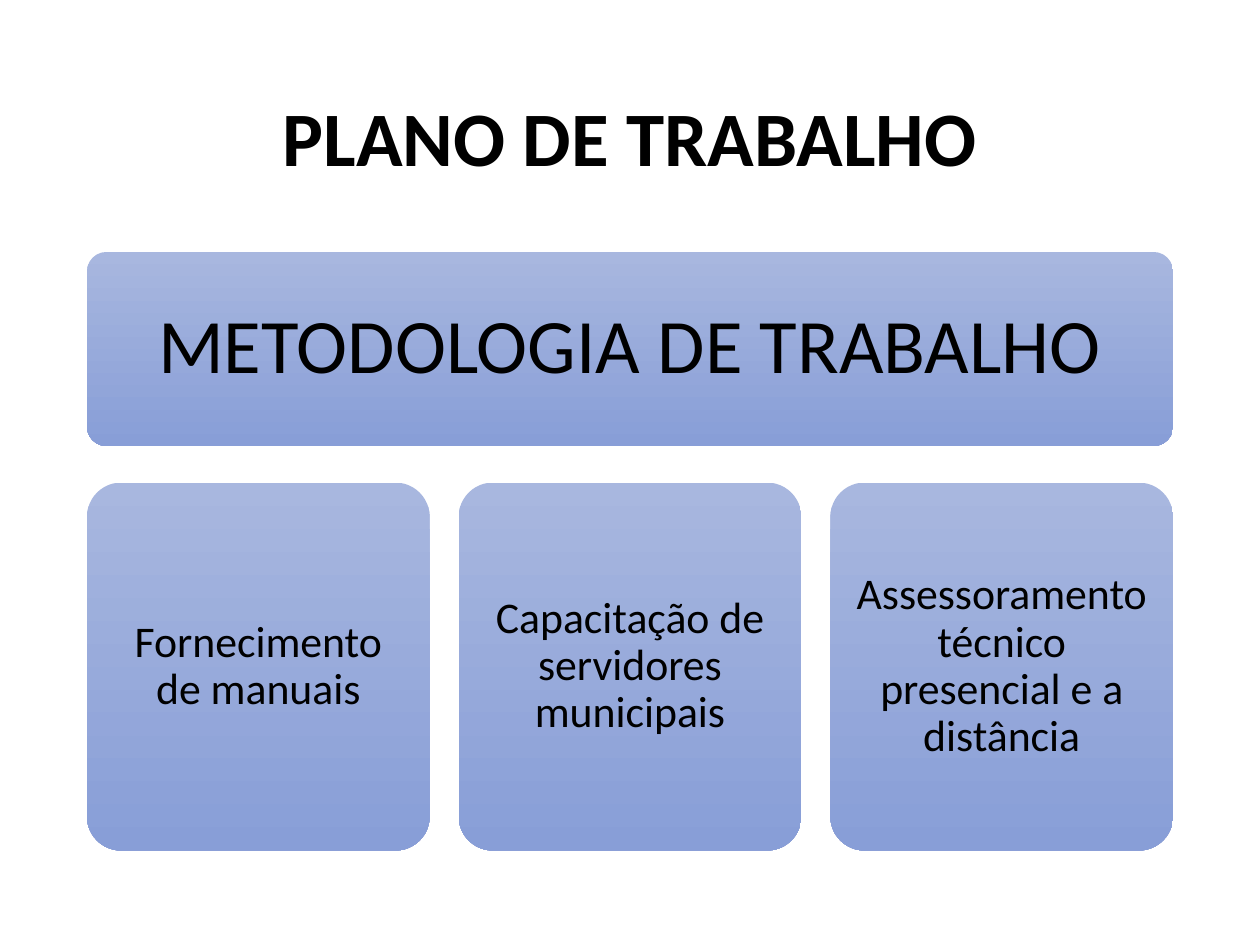
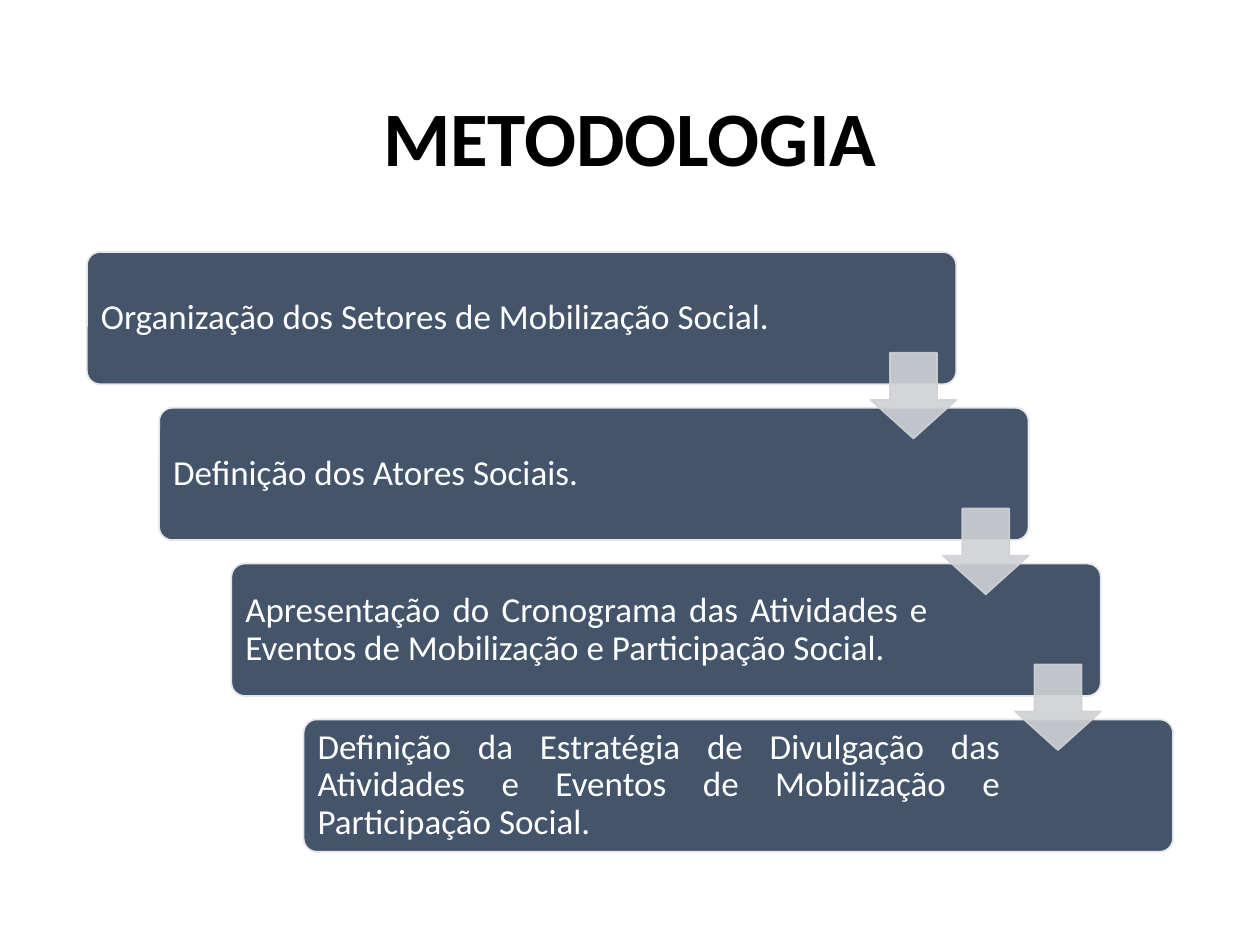
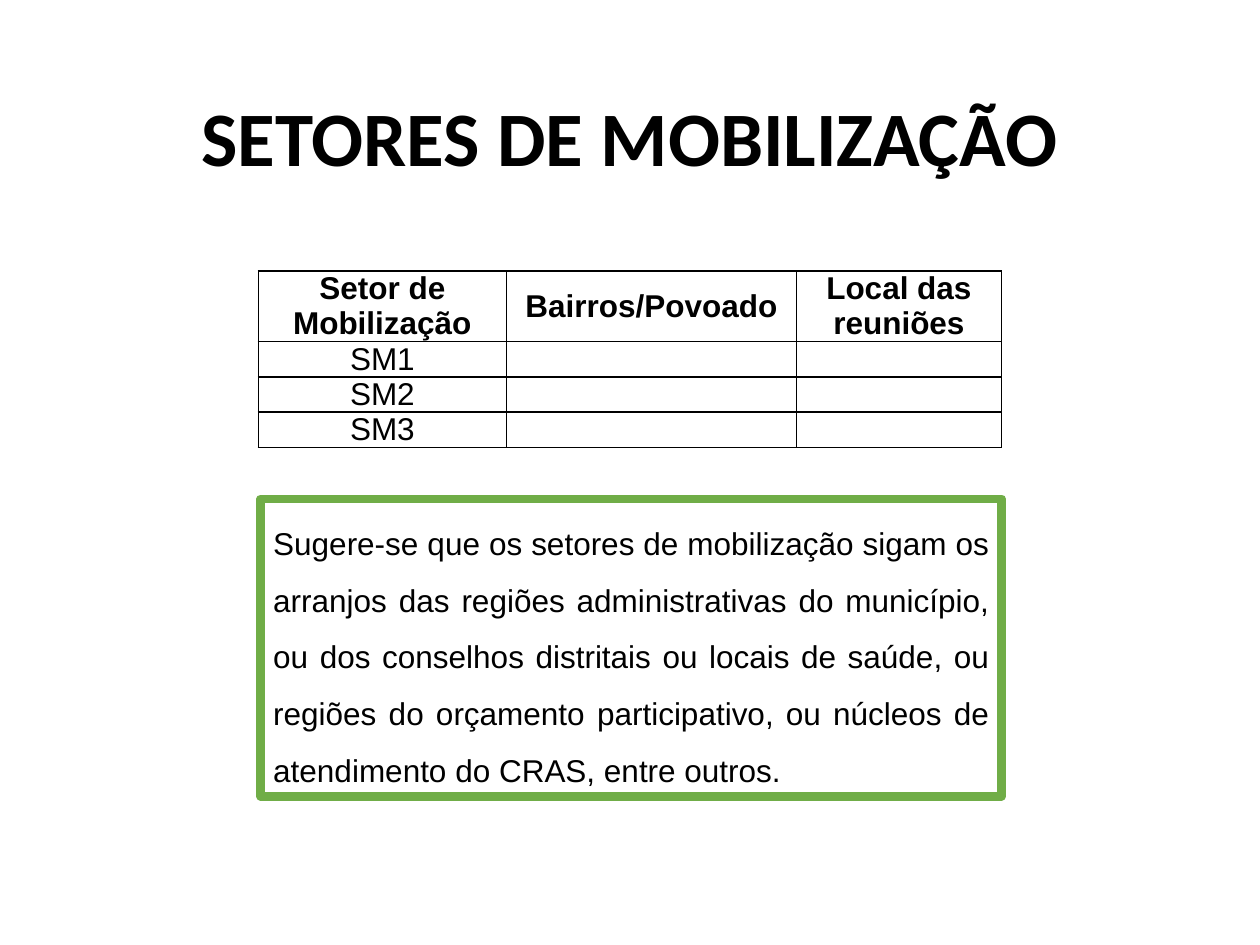
from dataclasses import dataclass

from lxml.etree import SubElement
from pptx import Presentation
from pptx.dml.color import RGBColor
from pptx.enum.shapes import MSO_SHAPE
from pptx.enum.text import MSO_ANCHOR, MSO_AUTO_SIZE, PP_ALIGN
from pptx.oxml.ns import qn
from pptx.util import Inches, Pt

BLACK = "000000"
WHITE = "FFFFFF"
CARD_TOP = "A8B7DF"
CARD_BOTTOM = "889ED7"
STEP_FILL = "44546A"
STEP_LINE = "E7E6E6"
ARROW = "CFD1D4"
NOTE_LINE = "70AD47"
LEFT = 0.69
WIDTH = 8.62
TITLE_ONLY = 5

CARDS = [
    "Fornecimento de manuais",
    "Capacitação de servidores municipais",
    "Assessoramento técnico presencial e a distância",
]
STEPS = [
    "Organização dos Setores de Mobilização Social.",
    "Definição dos Atores Sociais.",
    "Apresentação do Cronograma das Atividades e Eventos de Mobilização e Participação Social.",
    "Definição da Estratégia de Divulgação das Atividades e Eventos de Mobilização e Participação Social.",
]
SECTORS = [
    ["Setor de Mobilização", "Bairros/Povoado", "Local das reuniões"],
    ["SM1", "", ""],
    ["SM2", "", ""],
    ["SM3", "", ""],
]
NOTE = (
    "Sugere-se que os setores de mobilização sigam os arranjos das regiões "
    "administrativas do município, ou dos conselhos distritais ou locais de saúde, "
    "ou regiões do orçamento participativo, ou núcleos de atendimento do CRAS, entre outros."
)


@dataclass(frozen=True)
class Area:
    left: float
    top: float
    width: float
    height: float

    def lengths(self):
        return [Inches(side) for side in (self.left, self.top, self.width, self.height)]


@dataclass(frozen=True)
class TextStyle:
    size: int
    color: str = BLACK
    font: str = "Calibri"
    bold: bool = False
    align: PP_ALIGN = PP_ALIGN.CENTER
    spacing: float = 0.9


TITLE_STYLE = TextStyle(44, bold=True)
HEADER_STYLE = TextStyle(44)
CARD_STYLE = TextStyle(25)
STEP_STYLE = TextStyle(20, WHITE, align=PP_ALIGN.JUSTIFY)
HEAD_CELL_STYLE = TextStyle(18, font="Arial", bold=True, spacing=1.0)
CELL_STYLE = TextStyle(18, font="Arial", spacing=1.0)
NOTE_STYLE = TextStyle(18, font="Arial", align=PP_ALIGN.JUSTIFY, spacing=1.5)


def rgb(color: str) -> RGBColor:
    return RGBColor.from_string(color)


def write(frame, text: str, style: TextStyle) -> None:
    frame.text = text
    para = frame.paragraphs[0]
    para.alignment = style.align
    para.line_spacing = style.spacing
    para.font.name = style.font
    para.font.size = Pt(style.size)
    para.font.bold = style.bold
    para.font.color.rgb = rgb(style.color)


def set_margins(target, left: float, top: float, right: float, bottom: float) -> None:
    target.margin_left = Inches(left)
    target.margin_top = Inches(top)
    target.margin_right = Inches(right)
    target.margin_bottom = Inches(bottom)


def add_page(deck, title: str):
    page = deck.slides.add_slide(deck.slide_layouts[TITLE_ONLY])
    box = page.shapes.title
    box.left, box.top, box.width, box.height = Area(LEFT, 0.4, WIDTH, 1.45).lengths()
    frame = box.text_frame
    frame.auto_size = MSO_AUTO_SIZE.NONE
    frame.vertical_anchor = MSO_ANCHOR.MIDDLE
    write(frame, title, TITLE_STYLE)
    return page


def add_box(page, kind: MSO_SHAPE, area: Area, fill: str = "", line: str = "", weight: float = 1):
    box = page.shapes.add_shape(kind, *area.lengths())
    box.shadow.inherit = False
    if fill:
        box.fill.solid()
        box.fill.fore_color.rgb = rgb(fill)
    if line:
        box.line.color.rgb = rgb(line)
        box.line.width = Pt(weight)
    else:
        box.line.fill.background()
    return box


def add_card(page, area: Area, text: str, style: TextStyle, inset: float) -> None:
    box = add_box(page, MSO_SHAPE.ROUNDED_RECTANGLE, area)
    box.adjustments[0] = 0.1
    box.fill.gradient()
    box.fill.gradient_angle = 270
    for stop, color in zip(box.fill.gradient_stops, (CARD_TOP, CARD_BOTTOM)):
        stop.color.rgb = rgb(color)
    set_margins(box.text_frame, inset, inset, inset, inset)
    write(box.text_frame, text, style)


def add_step(page, area: Area, text: str) -> None:
    box = add_box(page, MSO_SHAPE.ROUNDED_RECTANGLE, area, STEP_FILL, STEP_LINE)
    box.adjustments[0] = 0.1
    set_margins(box.text_frame, 0.08, 0.02, 1.34, 0.02)
    write(box.text_frame, text, STEP_STYLE)


def add_arrow(page, area: Area) -> None:
    arrow = add_box(page, MSO_SHAPE.DOWN_ARROW, area, ARROW, ARROW)
    arrow.adjustments[0] = 0.55
    arrow.adjustments[1] = 0.45
    for color in arrow._element.spPr.iter(qn("a:srgbClr")):
        SubElement(color, qn("a:alpha"), val="90000")


def add_borders(cell) -> None:
    properties = cell._tc.get_or_add_tcPr()
    for index, side in enumerate(("lnL", "lnR", "lnT", "lnB")):
        line = properties.makeelement(qn(f"a:{side}"), {"w": str(Pt(1))})
        fill = SubElement(line, qn("a:solidFill"))
        SubElement(fill, qn("a:srgbClr"), val=BLACK)
        properties.insert(index, line)


def fill_cell(cell, text: str, style: TextStyle) -> None:
    set_margins(cell, 0.07, 0, 0.07, 0)
    cell.vertical_anchor = MSO_ANCHOR.MIDDLE
    cell.fill.background()
    add_borders(cell)
    write(cell.text_frame, text, style)
    if not text:
        SubElement(cell.text_frame.paragraphs[0]._p, qn("a:endParaRPr"), sz="1200")


def add_sector_table(page) -> None:
    area = Area(2.05, 2.15, 5.9, 1.4)
    table = page.shapes.add_table(len(SECTORS), len(SECTORS[0]), *area.lengths()).table
    table.first_row = False
    table.horz_banding = False
    for column, width in zip(table.columns, (1.97, 2.3, 1.63)):
        column.width = Inches(width)
    for index, texts in enumerate(SECTORS):
        table.rows[index].height = Inches(0.28 if index else 0.56)
        style = CELL_STYLE if index else HEAD_CELL_STYLE
        for cell, text in zip(table.rows[index].cells, texts):
            fill_cell(cell, text, style)


def build_plan(deck) -> None:
    page = add_page(deck, "PLANO DE TRABALHO")
    header = Area(LEFT, 2, WIDTH, 1.54)
    add_card(page, header, "METODOLOGIA DE TRABALHO", HEADER_STYLE, 0.18)
    width = 2.72
    pitch = (WIDTH - width) / (len(CARDS) - 1)
    for index, text in enumerate(CARDS):
        add_card(page, Area(LEFT + index * pitch, 3.83, width, 2.92), text, CARD_STYLE, 0.1)


def build_method(deck) -> None:
    page = add_page(deck, "METODOLOGIA")
    width = 6.9
    gaps = len(STEPS) - 1
    across = (WIDTH - width) / gaps
    down = 3.71 / gaps
    for index, text in enumerate(STEPS):
        add_step(page, Area(LEFT + index * across, 2 + index * down, width, 1.05), text)
    for index in range(gaps):
        add_arrow(page, Area(6.91 + index * across, 2.8 + index * down, 0.68, 0.68))


def build_sectors(deck) -> None:
    page = add_page(deck, "SETORES DE MOBILIZAÇÃO")
    add_sector_table(page)
    box = add_box(page, MSO_SHAPE.RECTANGLE, Area(2.07, 3.96, 5.88, 2.36), WHITE, NOTE_LINE, 5)
    box.text_frame.vertical_anchor = MSO_ANCHOR.TOP
    write(box.text_frame, NOTE, NOTE_STYLE)


def main() -> None:
    deck = Presentation()
    deck.slide_width = Inches(10)
    deck.slide_height = Inches(7.5)
    build_plan(deck)
    build_method(deck)
    build_sectors(deck)
    deck.save("out.pptx")


if __name__ == "__main__":
    main()
